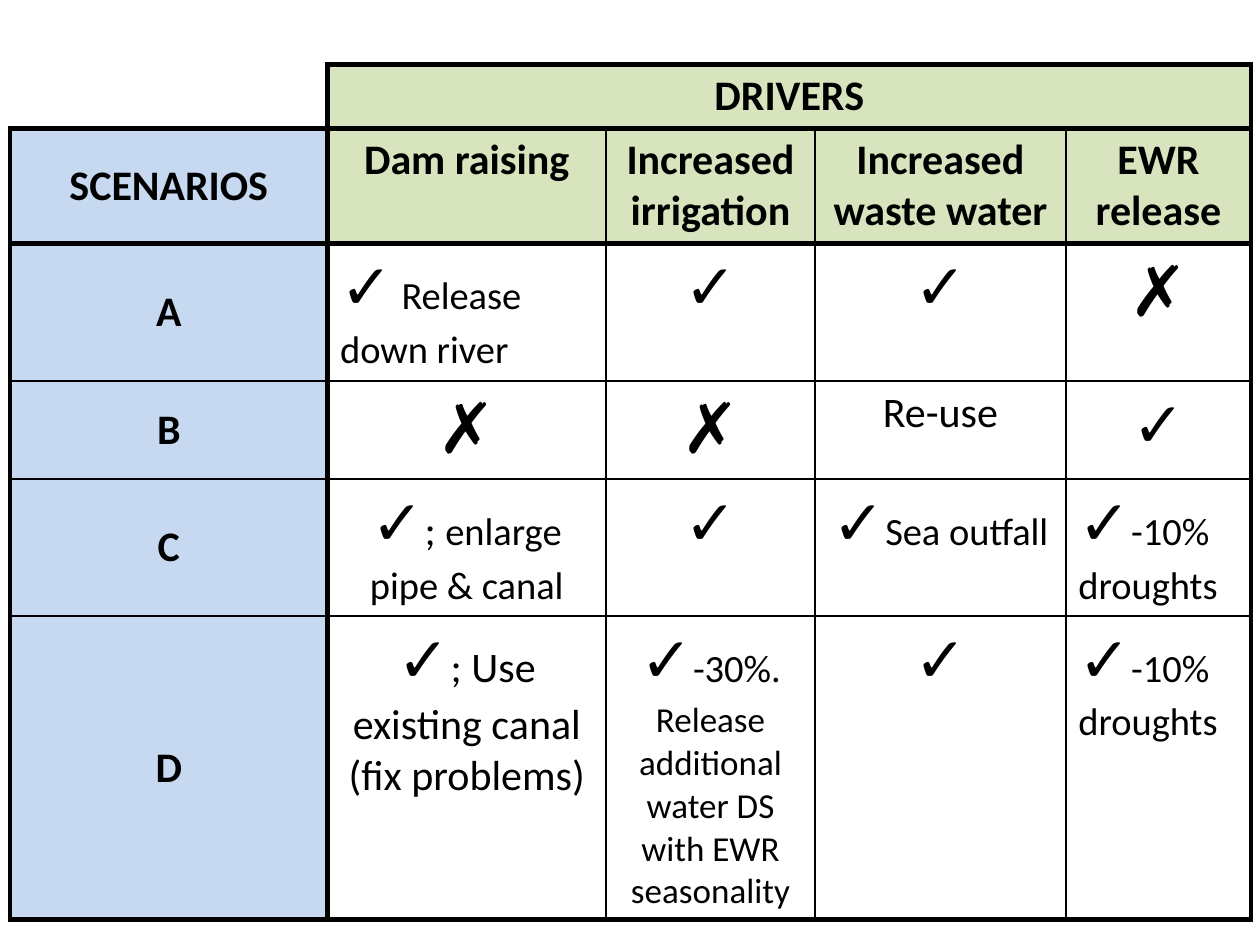
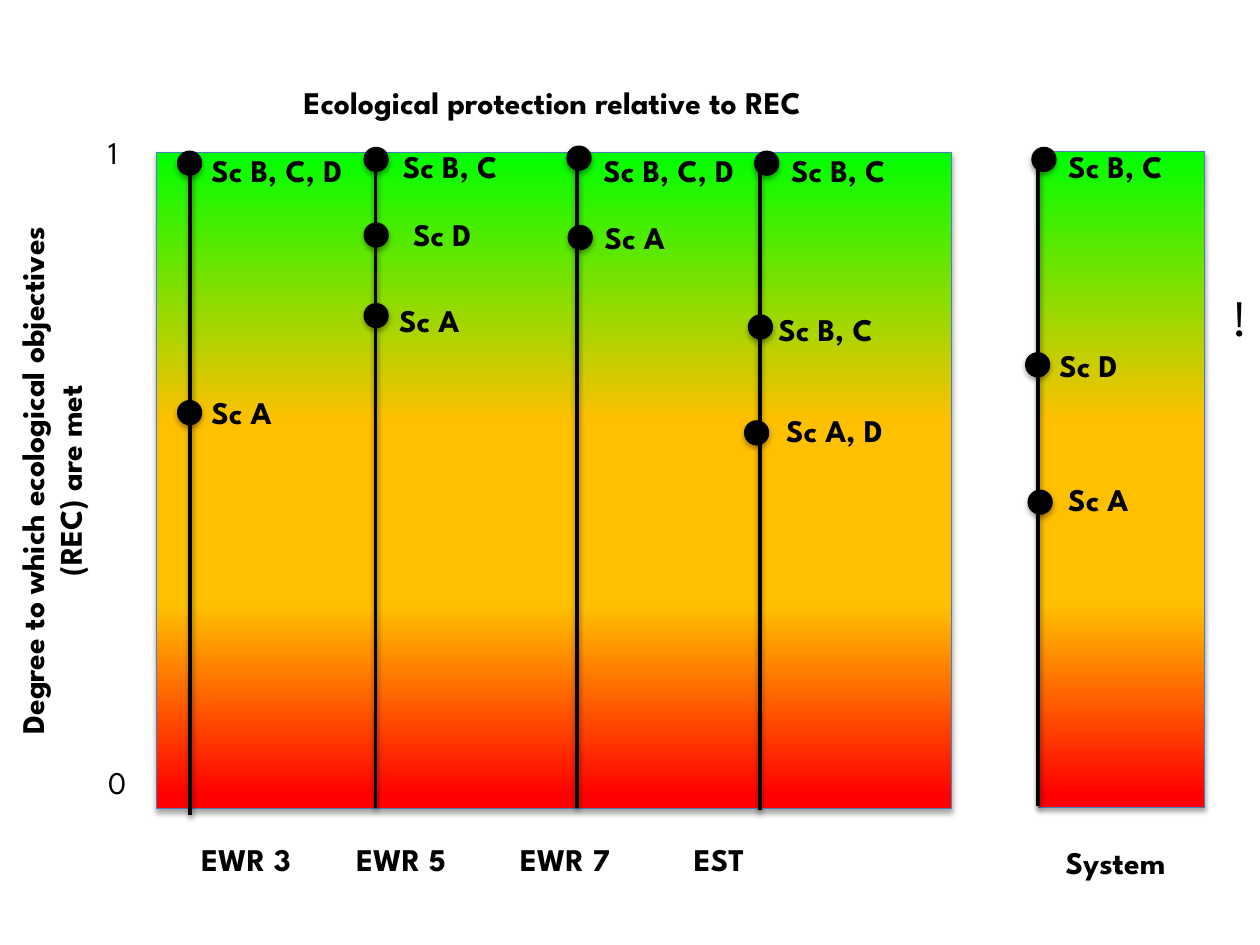
"""Build the scenario matrix and ecological protection slides."""
from dataclasses import dataclass
from typing import Optional

from lxml.etree import SubElement
from pptx import Presentation
from pptx.dml.color import RGBColor
from pptx.enum.shapes import MSO_CONNECTOR as Connector, MSO_SHAPE as Preset
from pptx.enum.text import MSO_ANCHOR as Anchor, MSO_AUTO_SIZE as AutoSize, PP_ALIGN as Align
from pptx.oxml.ns import qn
from pptx.util import Inches, Pt

BLACK = RGBColor(0x00, 0x00, 0x00)
DRIVER_GREEN = RGBColor(0xD7, 0xE4, 0xBD)
SCENARIO_BLUE = RGBColor(0xC6, 0xD9, 0xF1)
BAND_OUTLINE = RGBColor(0x4B, 0x7E, 0xBC)
GOOD = RGBColor(0x00, 0xFF, 0x00)
MODERATE = RGBColor(0xFF, 0xC0, 0x00)
POOR = RGBColor(0xFF, 0x00, 0x00)
BAND_STOPS = ((0, GOOD), (41, MODERATE), (69, MODERATE), (98, POOR))

TABLE_FONT = "Calibri"
CHART_FONT = "League Spartan"
COLUMN_WIDTHS = (2.52, 2.21, 1.66, 1.99, 1.47)
ROW_HEIGHTS = (0.51, 0.91, 1.09, 0.78, 1.08, 2.41)
THICK_VERTICALS = {0, 1, 5}
THICK_HORIZONTALS = {0, 1, 2, 6}
DOT_SIZE = 0.19
LABEL_WIDTH = 1.4
LABEL_HEIGHT = 0.4


@dataclass(frozen=True)
class TextRun:
    """A piece of text with its size and weight."""
    text: str
    size: float
    bold: bool = False


@dataclass(frozen=True)
class MatrixCell:
    """The runs and look of one table cell."""
    runs: tuple[TextRun, ...] = ()
    fill: Optional[RGBColor] = None
    align: Align = Align.CENTER
    anchor: Anchor = Anchor.TOP


@dataclass(frozen=True)
class Box:
    """A rectangle in inches."""
    left: float
    top: float
    width: float
    height: float

    def emu(self) -> tuple[Inches, ...]:
        """Return the four lengths as Inches."""
        return tuple(map(Inches, (self.left, self.top, self.width, self.height)))


@dataclass(frozen=True)
class Axis:
    """A vertical site line with its caption."""
    x: float
    top: float
    caption: str
    caption_left: float
    caption_top: float = 6.62


@dataclass(frozen=True)
class Marker:
    """A dot on an axis and the scenarios it stands for."""
    left: float
    top: float
    label: str
    label_left: float
    label_top: float


TICK = TextRun("✓", 36)
CROSS = TextRun("✗", 40)


def heading(text: str, fill: RGBColor = DRIVER_GREEN, anchor: Anchor = Anchor.TOP) -> MatrixCell:
    """Return a bold heading cell."""
    return MatrixCell((TextRun(text, 24, True),), fill, anchor=anchor)


def scenario(text: str) -> MatrixCell:
    """Return a heading cell for the scenario column."""
    return heading(text, SCENARIO_BLUE, Anchor.MIDDLE)


def entry(*runs: TextRun, align: Align = Align.CENTER) -> MatrixCell:
    """Return an unfilled cell holding the runs."""
    return MatrixCell(runs, align=align)


DROUGHTS = entry(TICK, TextRun("-10% droughts", 22), align=Align.LEFT)

MATRIX = (
    (MatrixCell(), heading("DRIVERS")),
    (scenario("SCENARIOS"), heading("Dam raising"), heading("Increased irrigation"),
     heading("Increased waste water"), heading("EWR release")),
    (scenario("A"), entry(TICK, TextRun(" Release down river", 22), align=Align.LEFT),
     entry(TICK), entry(TICK), entry(CROSS)),
    (scenario("B"), entry(CROSS), entry(CROSS), entry(TextRun("Re-use", 24)), entry(TICK)),
    (scenario("C"), entry(TICK, TextRun("; ", 24), TextRun("enlarge pipe & canal", 22)),
     entry(TICK), entry(TICK, TextRun("Sea outfall", 22)), DROUGHTS),
    (scenario("D"), entry(TICK, TextRun("; Use existing canal (fix problems)", 24)),
     entry(TICK, TextRun("-30%. ", 22),
           TextRun("Release additional water DS with EWR seasonality", 20)),
     entry(TICK), DROUGHTS),
)

BANDS = (Box(1.24, 1.21, 6.31, 5.21), Box(8.24, 1.2, 1.32, 5.21))
AXIS_LENGTH = 5.21
AXES = (
    Axis(1.51, 1.26, "EWR 3", 1.5),
    Axis(2.98, 1.2, "EWR 5", 2.73),
    Axis(4.58, 1.2, "EWR 7", 4.03),
    Axis(6.03, 1.22, "EST", 5.41),
    Axis(8.24, 1.19, "System", 8.36, 6.64),
)
MARKERS = (
    Marker(1.41, 1.2, "Sc B, C, D", 1.58, 1.15),
    Marker(1.41, 3.18, "Sc A", 1.58, 3.07),
    Marker(2.89, 1.17, "Sc B, C", 3.1, 1.12),
    Marker(2.89, 1.77, "Sc D", 3.18, 1.66),
    Marker(2.89, 2.41, "Sc A", 3.07, 2.34),
    Marker(4.5, 1.16, "Sc B, C, D", 4.69, 1.15),
    Marker(4.51, 1.79, "Sc A", 4.7, 1.68),
    Marker(5.99, 1.2, "Sc B, C", 6.18, 1.15),
    Marker(5.94, 2.5, "Sc B, C", 6.08, 2.41),
    Marker(5.91, 3.34, "Sc A, D", 6.14, 3.21),
    Marker(8.19, 1.17, "Sc B, C", 8.38, 1.12),
    Marker(8.14, 2.8, "Sc D", 8.31, 2.7),
    Marker(8.16, 3.89, "Sc A", 8.38, 3.76),
)


def write_runs(paragraph, runs: tuple[TextRun, ...], font_name: str, align: Align) -> None:
    """Fill a paragraph run by run."""
    paragraph.alignment = align
    for piece in runs:
        run = paragraph.add_run()
        run.text = piece.text
        font = run.font
        font.name, font.size, font.bold = font_name, Pt(piece.size), piece.bold
        font.color.rgb = BLACK


def set_border(cell, side: str, points: float) -> None:
    """Draw one cell border, or clear it when the width is zero."""
    line = SubElement(cell._tc.get_or_add_tcPr(), qn(f"a:ln{side}"), w=str(Pt(points)))
    if points:
        solid = SubElement(line, qn("a:solidFill"))
        SubElement(solid, qn("a:srgbClr"), val=str(BLACK))
    else:
        SubElement(line, qn("a:noFill"))


def set_borders(cell, row: int, column: int, span: int) -> None:
    """Set all borders of a cell from the thick grid lines."""
    corner = row == column == 0
    sides = (("L", column, THICK_VERTICALS), ("R", column + span, THICK_VERTICALS),
             ("T", row, THICK_HORIZONTALS), ("B", row + 1, THICK_HORIZONTALS))
    for side, grid_line, thick in sides:
        outside = corner and side in "LT"
        set_border(cell, side, 0 if outside else 3 if grid_line in thick else 1)


def add_matrix(slide) -> None:
    """Add the table of scenarios and drivers."""
    area = Box(0.08, 0.51, sum(COLUMN_WIDTHS), sum(ROW_HEIGHTS))
    table = slide.shapes.add_table(len(ROW_HEIGHTS), len(COLUMN_WIDTHS), *area.emu()).table
    table.first_row = table.horz_banding = False
    for column, width in zip(table.columns, COLUMN_WIDTHS):
        column.width = Inches(width)
    for row, height in zip(table.rows, ROW_HEIGHTS):
        row.height = Inches(height)
    table.cell(0, 1).merge(table.cell(0, 4))
    for row_index, row_cells in enumerate(MATRIX):
        for column_index, content in enumerate(row_cells):
            cell = table.cell(row_index, column_index)
            set_borders(cell, row_index, column_index, cell.span_width if cell.is_merge_origin else 1)
            if content.fill is None:
                cell.fill.background()
            else:
                cell.fill.solid()
                cell.fill.fore_color.rgb = content.fill
            cell.vertical_anchor = content.anchor
            write_runs(cell.text_frame.paragraphs[0], content.runs, TABLE_FONT, content.align)


def add_shadow(shape, distance: float, opacity: int) -> None:
    """Give a shape or connector a soft shadow below it."""
    effects = SubElement(shape._element.spPr, qn("a:effectLst"))
    shadow = SubElement(effects, qn("a:outerShdw"), blurRad=str(Pt(3.1)), dist=str(Pt(distance)),
                        dir="5400000", rotWithShape="0")
    color = SubElement(shadow, qn("a:srgbClr"), val=str(BLACK))
    SubElement(color, qn("a:alpha"), val=str(opacity * 1000))


def add_band(slide, box: Box) -> None:
    """Add a rectangle graded from good to poor."""
    band = slide.shapes.add_shape(Preset.RECTANGLE, *box.emu())
    band.fill.gradient()
    band.fill.gradient_angle = 270
    stops = band._element.spPr.find(qn("a:gradFill")).find(qn("a:gsLst"))
    for stop in list(stops):
        stops.remove(stop)
    for position, color in BAND_STOPS:
        stop = SubElement(stops, qn("a:gs"), pos=str(position * 1000))
        SubElement(stop, qn("a:srgbClr"), val=str(color))
    band.line.color.rgb = BAND_OUTLINE
    band.line.width = Pt(0.75)
    add_shadow(band, 1.8, 35)


def add_label(slide, text: str, box: Box, size: float = 18, bold: bool = True,
              align: Align = Align.LEFT, rotation: float = 0) -> None:
    """Add a text box with a single paragraph."""
    label = slide.shapes.add_textbox(*box.emu())
    label.rotation = rotation
    label.text_frame.word_wrap = True
    write_runs(label.text_frame.paragraphs[0], (TextRun(text, size, bold),), CHART_FONT, align)


def add_title(slide, text: str, box: Box) -> None:
    """Place and fill the title placeholder."""
    title = slide.shapes.title
    title.left, title.top, title.width, title.height = box.emu()
    frame = title.text_frame
    frame.auto_size = AutoSize.NONE
    frame.vertical_anchor = Anchor.TOP
    write_runs(frame.paragraphs[0], (TextRun(text, 18, True),), CHART_FONT, Align.CENTER)


def add_axis(slide, axis: Axis) -> None:
    """Add a site line and its caption."""
    line = slide.shapes.add_connector(
        Connector.STRAIGHT, Inches(axis.x), Inches(axis.top),
        Inches(axis.x), Inches(axis.top + AXIS_LENGTH))
    line.line.color.rgb = BLACK
    line.line.width = Pt(2)
    add_shadow(line, 1.6, 38)
    add_label(slide, axis.caption, Box(axis.caption_left, axis.caption_top, LABEL_WIDTH, LABEL_HEIGHT))


def add_marker(slide, marker: Marker) -> None:
    """Add a dot and its scenario label."""
    dot = slide.shapes.add_shape(
        Preset.OVAL, *Box(marker.left, marker.top, DOT_SIZE, DOT_SIZE).emu())
    dot.fill.solid()
    dot.fill.fore_color.rgb = BLACK
    dot.line.color.rgb = BLACK
    dot.line.width = Pt(0.75)
    add_shadow(dot, 1.8, 35)
    add_label(slide, marker.label, Box(marker.label_left, marker.label_top, LABEL_WIDTH, LABEL_HEIGHT))


def add_protection_chart(slide) -> None:
    """Add the bands, axes, markers and labels of the protection diagram."""
    add_title(slide, "Ecological protection relative to REC", Box(1.99, 0.61, 4.79, 0.4))
    for box in BANDS:
        add_band(slide, box)
    add_label(slide, "Degree to which ecological objectives (REC) are met",
              Box(-1.99, 3.46, 4.79, 0.71), align=Align.CENTER, rotation=270)
    for text, top in (("1", 1.01), ("0", 6.01)):
        add_label(slide, text, Box(0.76, top, 0.38, LABEL_HEIGHT), bold=False)
    for axis in AXES:
        add_axis(slide, axis)
    for marker in MARKERS:
        add_marker(slide, marker)
    add_label(slide, "!", Box(9.68, 2.23, 0.32, 0.57), size=28, bold=False)


def main() -> None:
    """Build and save the presentation."""
    presentation = Presentation()
    presentation.slide_width, presentation.slide_height = Inches(10), Inches(7.5)
    title_only, blank = presentation.slide_layouts[5], presentation.slide_layouts[6]
    add_matrix(presentation.slides.add_slide(blank))
    add_protection_chart(presentation.slides.add_slide(title_only))
    presentation.save("out.pptx")


if __name__ == "__main__":
    main()
